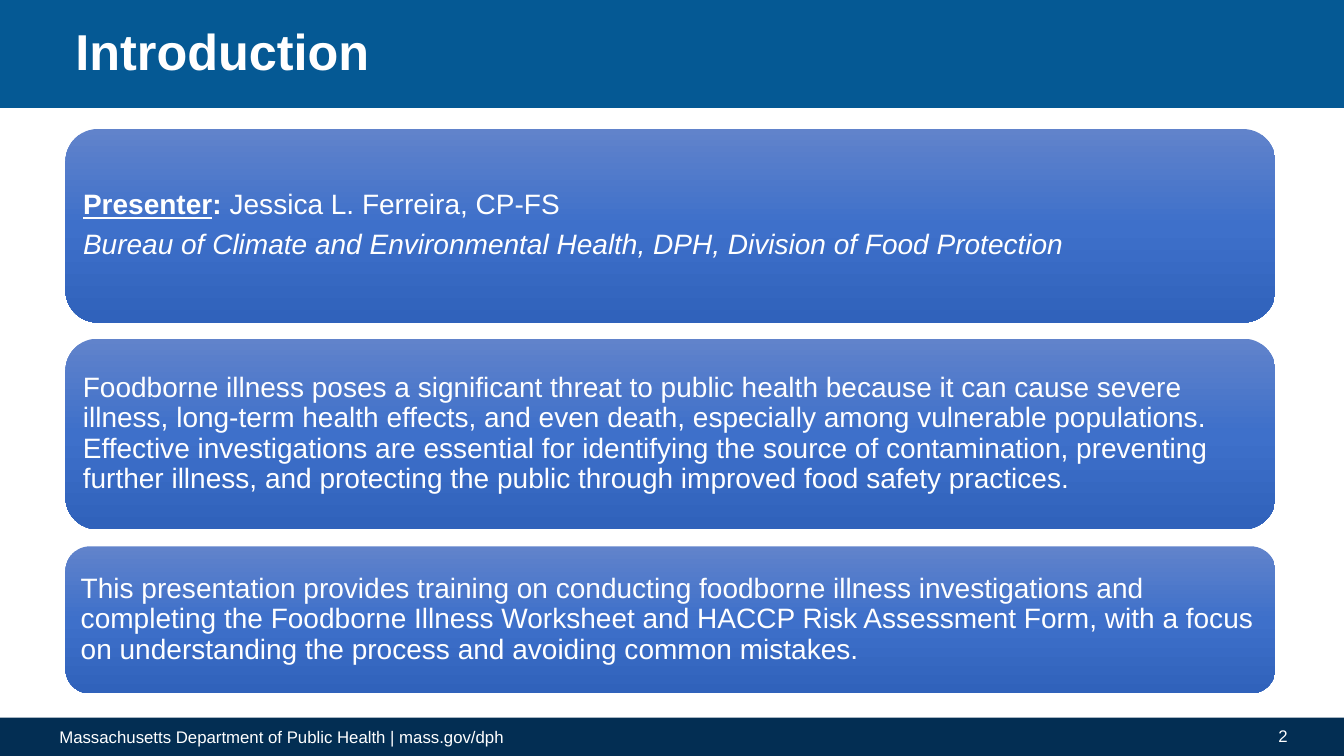
"""Build the introduction slide of a foodborne illness training."""
from copy import deepcopy

from pptx import Presentation
from pptx.dml.color import RGBColor
from pptx.enum.shapes import MSO_SHAPE
from pptx.enum.text import MSO_ANCHOR, PP_ALIGN
from pptx.oxml.ns import qn
from pptx.util import Inches, Pt


def color(hex_code):
    return RGBColor.from_string(hex_code)


def apply(target, values):
    for name, value in values.items():
        setattr(target, name, value)


class IntroSlide:
    font_name = "Arial"
    text_color = "FFFFFF"
    card_gradient = [(0, "6183CB"), (0.5, "3E70CA"), (1, "3062BB")]
    card_frame = {
        "word_wrap": True,
        "vertical_anchor": MSO_ANCHOR.MIDDLE,
        **{f"margin_{side}": Inches(0.08) for side in ("left", "top", "right", "bottom")},
    }
    card_paragraph = {"alignment": PP_ALIGN.LEFT, "line_spacing": 0.9, "space_after": Pt(7)}

    def __init__(self, deck):
        self.slide = deck.slides.add_slide(deck.slide_layouts[6])

    def shape(self, preset, box):
        shape = self.slide.shapes.add_shape(preset, *map(Inches, box))
        shape.shadow.inherit = False
        shape.line.fill.background()
        return shape

    def band(self, box, fill):
        band = self.shape(MSO_SHAPE.RECTANGLE, box)
        band.fill.solid()
        band.fill.fore_color.rgb = color(fill)

    def fill_text(self, frame, paragraphs, size, paragraph_format):
        for index, runs in enumerate(paragraphs):
            paragraph = frame.add_paragraph() if index else frame.paragraphs[0]
            apply(paragraph, paragraph_format)
            for words, emphasis in runs:
                run = paragraph.add_run()
                run.text = words
                apply(run.font, {"name": self.font_name, "size": Pt(size), **emphasis})
                run.font.color.rgb = color(self.text_color)

    def label(self, box, words, size, emphasis={}, paragraph_format={}, anchor=MSO_ANCHOR.MIDDLE):
        frame = self.slide.shapes.add_textbox(*map(Inches, box)).text_frame
        apply(frame, {"word_wrap": True, "vertical_anchor": anchor})
        self.fill_text(frame, [[(words, emphasis)]], size, paragraph_format)

    def card(self, top, height, paragraphs):
        card = self.shape(MSO_SHAPE.ROUNDED_RECTANGLE, (0.65, top, 12, height))
        card.fill.gradient()
        card.fill.gradient_angle = 270
        stop_list = card.element.spPr.find(f"{qn('a:gradFill')}/{qn('a:gsLst')}")
        stop_list.append(deepcopy(stop_list[0]))
        for stop, (position, shade) in zip(card.fill.gradient_stops, self.card_gradient):
            stop.position = position
            stop.color.rgb = color(shade)
        apply(card.text_frame, self.card_frame)
        self.fill_text(card.text_frame, paragraphs, 20, self.card_paragraph)


def main():
    deck = Presentation()
    apply(deck, {"slide_width": Inches(13.33), "slide_height": Inches(7.5)})
    intro = IntroSlide(deck)

    intro.band((0, 0, 13.33, 1.07), "055994")
    intro.band((0, 7.12, 13.33, 0.38), "032E53")
    intro.label((0.49, 7.16, 5.51, 0.3), "Massachusetts Department of Public Health | mass.gov/dph",
                12, anchor=MSO_ANCHOR.TOP)
    intro.label((0.65, 0.06, 12, 0.96), "Introduction", 36, {"bold": True}, {"line_spacing": 0.9})
    intro.label((9.88, 7.1, 2.99, 0.4), "2", 12,
                paragraph_format={"alignment": PP_ALIGN.RIGHT, "space_after": Pt(6)})

    presenter = [
        [("Presenter", {"bold": True, "underline": True}), (": ", {"bold": True}),
         ("Jessica L. Ferreira, CP-FS", {})],
        [("Bureau of Climate and Environmental Health, DPH, Division of Food Protection",
          {"italic": True})],
    ]
    threat = (
        "Foodborne illness poses a significant threat to public health because it can cause "
        "severe illness, long-term health effects, and even death, especially among vulnerable "
        "populations. Effective investigations are essential for identifying the source of "
        "contamination, preventing further illness, and protecting the public through improved "
        "food safety practices."
    )
    purpose = (
        "This presentation provides training on conducting foodborne illness investigations and "
        "completing the Foodborne Illness Worksheet and HACCP Risk Assessment Form, with a focus "
        "on understanding the process and avoiding common mistakes."
    )
    intro.card(1.28, 1.92, presenter)
    intro.card(3.36, 1.89, [[(threat, {})]])
    intro.card(5.42, 1.46, [[(purpose, {})]])

    deck.save("out.pptx")


if __name__ == "__main__":
    main()
